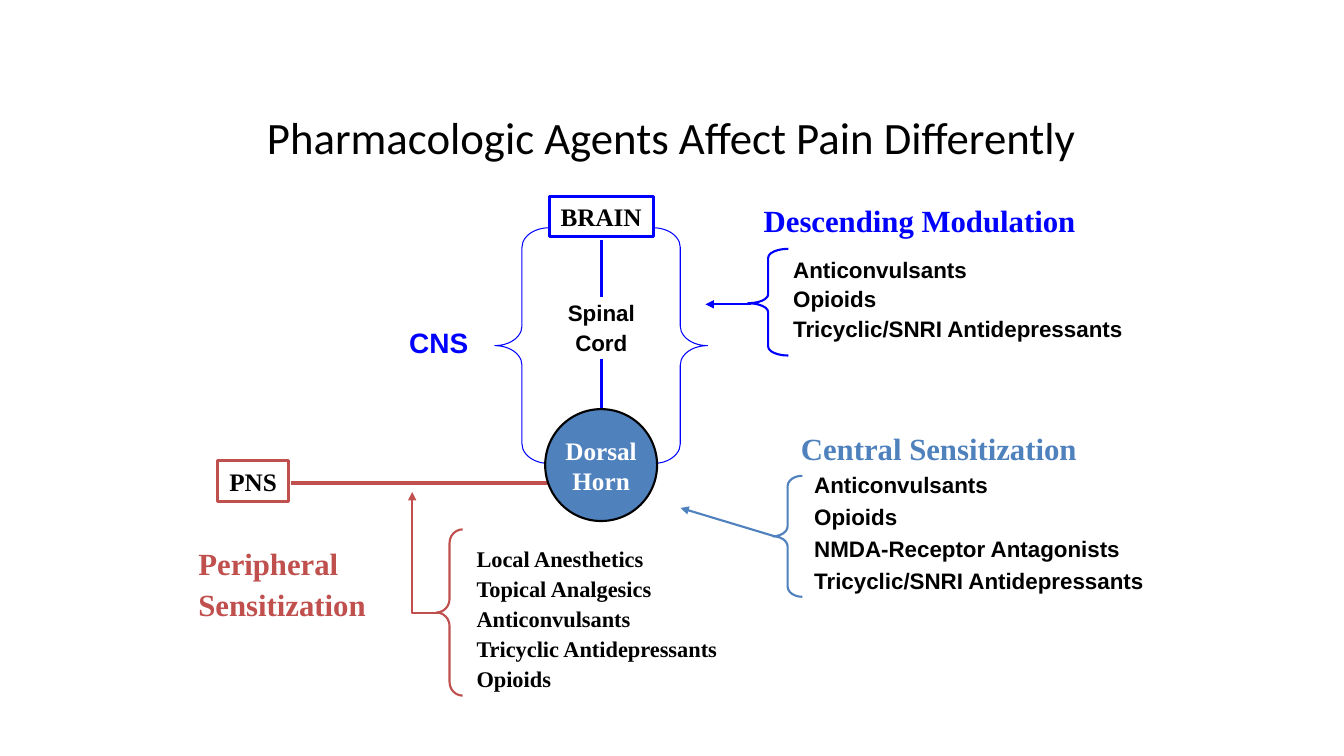
from lxml.etree import SubElement
from pptx import Presentation
from pptx.dml.color import RGBColor
from pptx.enum.shapes import MSO_CONNECTOR, MSO_SHAPE
from pptx.enum.text import MSO_ANCHOR, PP_ALIGN
from pptx.oxml.ns import qn
from pptx.util import Cm, Pt

COLORS = {
    "black": "000000",
    "white": "FFFFFF",
    "central": "4F81BD",
    "descending": "0000FF",
    "peripheral": "C0504D",
}
SERIF = "Times New Roman"
SANS = "Arial"
CENTER = PP_ALIGN.CENTER
LEFT = PP_ALIGN.LEFT


class PainDiagram:
    def __init__(self, slide):
        self.slide = slide

    def color(self, name):
        return RGBColor.from_string(COLORS[name])

    def set_text(self, shape, lines, size, font=SERIF, color="black", bold=True,
                 align=CENTER, gap=0, spacing=None, wrap=True,
                 anchor=MSO_ANCHOR.TOP, inset=(0.25, 0.13)):
        frame = shape.text_frame
        frame.word_wrap = wrap
        frame.vertical_anchor = anchor
        frame.margin_left = frame.margin_right = Cm(inset[0])
        frame.margin_top = frame.margin_bottom = Cm(inset[1])
        frame.text = "\n".join(lines)
        for index, paragraph in enumerate(frame.paragraphs):
            paragraph.alignment = align
            paragraph.space_before = Pt(gap if index else 0)
            if spacing:
                paragraph.line_spacing = spacing
            paragraph.font.name = font
            paragraph.font.size = Pt(size)
            paragraph.font.bold = bold
            paragraph.font.color.rgb = self.color(color)

    def title(self, text, place):
        title = self.slide.shapes.title
        title.left, title.top, title.width, title.height = map(Cm, place)
        self.set_text(title, [text], 32, "Calibri", bold=False, anchor=MSO_ANCHOR.MIDDLE)

    def text(self, lines, place, size, **style):
        box = self.slide.shapes.add_textbox(*map(Cm, place))
        self.set_text(box, lines, size, **style)

    def shape(self, kind, place, line, width, fill=None):
        shape = self.slide.shapes.add_shape(kind, *map(Cm, place))
        shape.shadow.inherit = False
        shape.line.color.rgb = self.color(line)
        shape.line.width = Pt(width)
        if fill:
            shape.fill.solid()
            shape.fill.fore_color.rgb = self.color(fill)
        else:
            shape.fill.background()
        return shape

    def label(self, text, place, line):
        box = self.shape(MSO_SHAPE.RECTANGLE, place, line, 2.25, "white")
        self.set_text(box, [text], 18, wrap=False)

    def brace(self, place, color, curve, middle=0.5, width=1.5, flip=False):
        brace = self.shape(MSO_SHAPE.LEFT_BRACE, place, color, width)
        brace.adjustments[0] = curve
        brace.adjustments[1] = middle
        if flip:
            brace._element.spPr.find(qn("a:xfrm")).set("flipH", "1")

    def line(self, start, end, color, width=2.25, arrow=False, bend=None):
        kind = MSO_CONNECTOR.ELBOW if bend else MSO_CONNECTOR.STRAIGHT
        connector = self.slide.shapes.add_connector(kind, *map(Cm, start + end))
        connector.line.color.rgb = self.color(color)
        connector.line.width = Pt(width)
        properties = connector._element.spPr
        if bend:
            properties.find(qn("a:prstGeom")).set("prst", bend)
        if arrow:
            SubElement(properties.find(qn("a:ln")), qn("a:tailEnd"), type="triangle")
        SubElement(properties, qn("a:effectLst"))


def main():
    presentation = Presentation()
    presentation.slide_width, presentation.slide_height = Cm(33.87), Cm(19.05)
    slide = presentation.slides.add_slide(presentation.slide_layouts[5])
    diagram = PainDiagram(slide)
    diagram.title("Pharmacologic Agents Affect Pain Differently", (2.69, 1.85, 28.47, 3.18))

    for left, flip in ((12.47, False), (16.46, True)):
        diagram.brace((left, 5.74, 1.37, 5.94), "descending", 0.36, width=0.75, flip=flip)
    for top, bottom in ((6.05, 7.49), (9.04, 10.64)):
        diagram.line((15.16, top), (15.16, bottom), "descending")
    diagram.line((7.34, 12.17), (13.82, 12.17), "peripheral")
    diagram.label("BRAIN", (13.84, 4.95, 2.62, 1.02), "descending")
    diagram.label("PNS", (5.49, 11.61, 1.78, 1.02), "peripheral")

    diagram.brace((11, 13.34, 0.66, 4.19), "peripheral", 0.52)
    diagram.line((11.13, 15.44), (10.39, 12.4), "peripheral", 1.5, True, "bentConnector2")
    diagram.brace((19.48, 11.99, 0.74, 3.05), "central", 0.35)
    diagram.line((19.51, 13.51), (17.15, 12.8), "central", 1.5, True)
    diagram.brace((18.85, 6.27, 1.02, 2.69), "descending", 0.22, 0.51)
    diagram.line((18.92, 7.67), (17.78, 7.67), "descending", 1.5, True, "bentConnector3")

    diagram.text(["Descending Modulation"], (18.11, 4.95, 10.13, 1.19), 22, color="descending")
    diagram.text(["Central Sensitization"], (19.2, 10.69, 8.92, 1.19), 22, color="central")
    diagram.text(["Peripheral", "Sensitization"], (4.75, 13.59, 7.72, 2.24), 22,
                 color="peripheral", align=LEFT, gap=3.3)

    diagram.text(["Local Anesthetics", "Topical Analgesics", "Anticonvulsants",
                  "Tricyclic Antidepressants", "Opioids"],
                 (11.76, 13.61, 7.72, 3.91), 16, align=LEFT, gap=2.3)
    sans = {"font": SANS, "gap": 3.8, "inset": (0.23, 0.1)}
    diagram.text(["Anticonvulsants", "Opioids", "NMDA-Receptor Antagonists",
                  "Tricyclic/SNRI Antidepressants"],
                 (20.29, 11.76, 9.35, 3.35), 16, align=LEFT, **sans)
    diagram.text(["Anticonvulsants", "Opioids", "Tricyclic/SNRI Antidepressants"],
                 (19.76, 6.43, 9.25, 2.34), 16, align=LEFT, spacing=0.9, **sans)
    diagram.text(["CNS"], (10.08, 8.1, 1.96, 1.09), 20, color="descending",
                 align=LEFT, wrap=False, **sans)
    diagram.text(["Spinal", "Cord"], (13.87, 7.52, 2.57, 1.6), 16, spacing=0.9, **sans)

    horn = diagram.shape(MSO_SHAPE.OVAL, (13.74, 10.31, 2.82, 2.82), "black", 1.5, "central")
    diagram.set_text(horn, ["Dorsal", "Horn"], 18, color="white", wrap=False,
                     anchor=MSO_ANCHOR.MIDDLE, inset=(0, 0))

    presentation.save("out.pptx")


if __name__ == "__main__":
    main()
